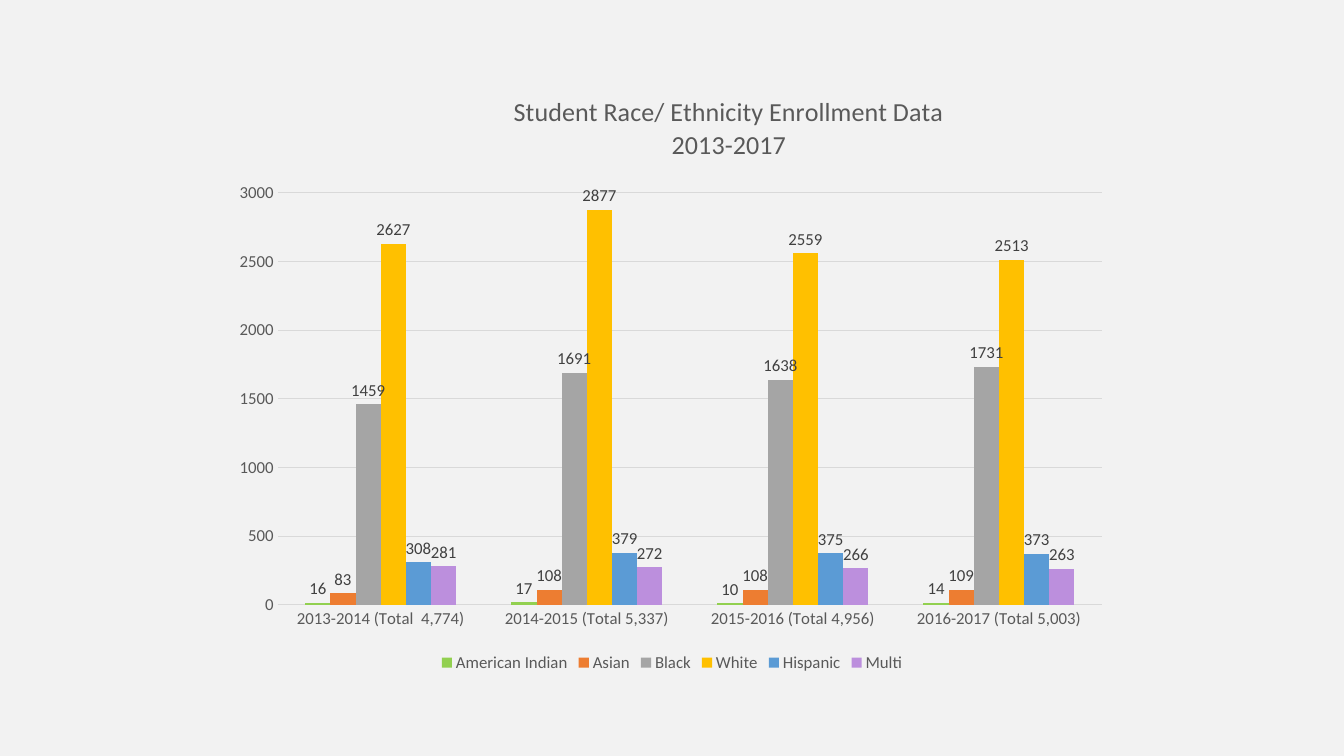
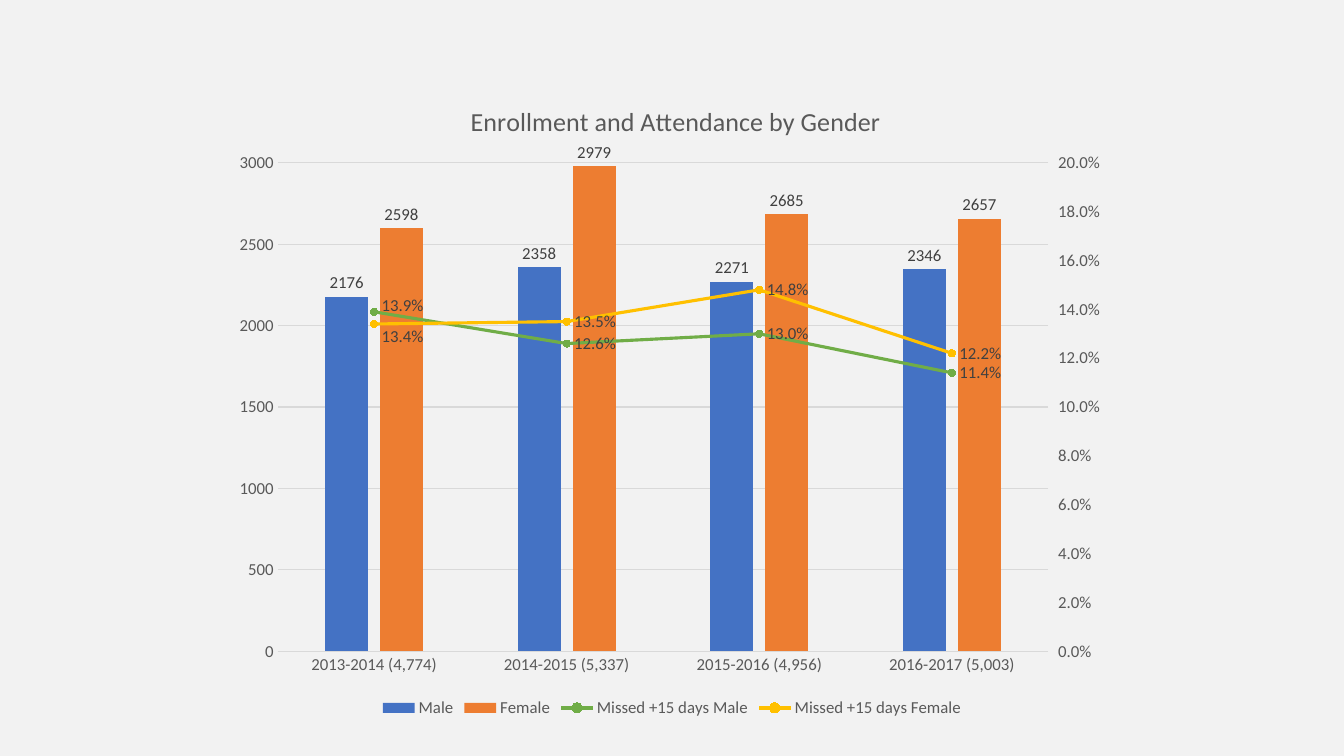
from copy import deepcopy

from pptx import Presentation
from pptx.chart.axis import ValueAxis
from pptx.chart.data import CategoryChartData
from pptx.dml.color import RGBColor
from pptx.enum.chart import (XL_CHART_TYPE, XL_LABEL_POSITION, XL_LEGEND_POSITION,
                             XL_MARKER_STYLE, XL_TICK_MARK)
from pptx.oxml import parse_xml
from pptx.oxml.ns import nsdecls, qn
from pptx.util import Inches, Pt


def color(hex_text):
    """Turn a hex string into a colour."""
    return RGBColor.from_string(hex_text)


def set_layout(parent, index, **settings):
    """Give a chart part a manual layout, creating it at index if missing."""
    layout = parent.find(qn("c:layout"))
    if layout is None:
        layout = parse_xml(f"<c:layout {nsdecls('c')}/>")
        parent.insert(index, layout)
    values = "".join(f'<c:{name} val="{value}"/>' for name, value in settings.items())
    layout.append(parse_xml(f"<c:manualLayout {nsdecls('c')}>{values}</c:manualLayout>"))


class Deck:
    """Holds the shared style, the presentation and the current slide."""

    font_name = "Calibri"
    text_size, title_size = 12, 18.6
    text_color, label_color, rule_color = "595959", "404040", "D9D9D9"
    left, top, width = 1 / 6, 0.105, 2 / 3

    def __init__(self):
        """Start a widescreen presentation with a light grey background."""
        self.presentation = Presentation()
        self.presentation.slide_width = Inches(13.33)
        self.presentation.slide_height = Inches(7.5)
        fill = self.presentation.slide_master.background.fill
        fill.solid()
        fill.fore_color.rgb = color("F2F2F2")
        self.slide = None

    def add_slide(self):
        """Add a blank slide and make it current."""
        self.slide = self.presentation.slides.add_slide(self.presentation.slide_layouts[6])

    def style_font(self, font, hex_text=text_color, size=text_size):
        """Apply the shared typeface with a size and a colour."""
        font.name = self.font_name
        font.size = Pt(size)
        font.bold = False
        font.color.rgb = color(hex_text)

    def add_column_chart(self, height, categories, series, overlap):
        """Add a clustered column chart from (name, values, number format) rows."""
        data = CategoryChartData()
        data.categories = categories
        for name, values, number_format in series:
            data.add_series(name, values, number_format)
        slide_width = self.presentation.slide_width
        slide_height = self.presentation.slide_height
        chart = self.slide.shapes.add_chart(
            XL_CHART_TYPE.COLUMN_CLUSTERED,
            int(slide_width * self.left), int(slide_height * self.top),
            int(slide_width * self.width), int(slide_height * height), data).chart
        self.style_font(chart.font)
        plot = chart.plots[0]
        plot.gap_width, plot.overlap = 219, overlap
        plot.vary_by_categories = False
        chart.has_legend = True
        chart.legend.position = XL_LEGEND_POSITION.BOTTOM
        chart.legend.include_in_layout = False
        self.style_font(chart.legend.font)
        self.style_axes(chart)
        return chart

    def style_axes(self, chart):
        """Style the category axis, the value axis and its gridlines."""
        for axis in (chart.category_axis, chart.value_axis):
            axis.major_tick_mark = axis.minor_tick_mark = XL_TICK_MARK.NONE
            self.style_font(axis.tick_labels.font)
        value_axis = chart.value_axis
        value_axis.minimum_scale, value_axis.maximum_scale = 0, 3000
        value_axis.major_unit = 500
        value_axis.format.line.fill.background()
        for part in (chart.category_axis, value_axis.major_gridlines):
            part.format.line.color.rgb = color(self.rule_color)
            part.format.line.width = Pt(0.75)

    def add_chart_title(self, chart, lines, left, top):
        """Write the chart title at a share of the chart's size."""
        chart.has_title = True
        frame = chart.chart_title.text_frame
        for index, line in enumerate(lines):
            paragraph = frame.add_paragraph() if index else frame.paragraphs[0]
            run = paragraph.add_run()
            run.text = line
            self.style_font(run.font, size=self.title_size)
        set_layout(chart.chart_title._element, 1, xMode="edge", yMode="edge", x=left, y=top)

    def place_plot(self, chart, left, top, width, height):
        """Set the inner plot area as shares of the chart's size."""
        set_layout(chart._chartSpace.chart.plotArea, 0, layoutTarget="inner",
                   xMode="edge", yMode="edge", x=left, y=top, w=width, h=height)

    def add_labels(self, series, position, number_format="General"):
        """Show the values of a series."""
        labels = series.data_labels
        labels.show_value = True
        labels.position = position
        labels.number_format = number_format
        labels.number_format_is_linked = False
        self.style_font(labels.font, self.label_color)

    def style_columns(self, chart, colors):
        """Colour and label each column series."""
        for series, hex_text in zip(chart.plots[0].series, colors):
            series.format.fill.solid()
            series.format.fill.fore_color.rgb = color(hex_text)
            series.invert_if_negative = False
            self.add_labels(series, XL_LABEL_POSITION.OUTSIDE_END)

    def move_to_lines(self, chart, first):
        """Turn the series from first onwards into lines on a right-hand axis."""
        columns = chart.plots[0]._element
        lines = parse_xml(
            f'<c:lineChart {nsdecls("c")}><c:grouping val="standard"/><c:varyColors val="0"/>'
            '<c:marker val="1"/><c:axId val="3001"/><c:axId val="3002"/></c:lineChart>')
        marker = lines.find(qn("c:marker"))
        for series in columns.findall(qn("c:ser"))[first:]:
            for flag in series.findall(qn("c:invertIfNegative")):
                series.remove(flag)
            marker.addprevious(series)
        columns.addnext(lines)

        category_axis = deepcopy(chart.category_axis._element)
        value_axis = deepcopy(chart.value_axis._element)
        chart.value_axis._element.addnext(value_axis)
        value_axis.addnext(category_axis)
        for axis, own, other in ((category_axis, "3001", "3002"), (value_axis, "3002", "3001")):
            axis.find(qn("c:axId")).set("val", own)
            axis.find(qn("c:crossAx")).set("val", other)
        value_axis.find(qn("c:axPos")).set("val", "r")
        value_axis.find(qn("c:crosses")).set("val", "max")
        ValueAxis(category_axis).visible = False
        right_axis = ValueAxis(value_axis)
        right_axis.has_major_gridlines = False
        right_axis.maximum_scale, right_axis.major_unit = 0.2, 0.02
        right_axis.major_tick_mark = XL_TICK_MARK.OUTSIDE
        right_axis.tick_labels.number_format = "0.0%"
        right_axis.tick_labels.number_format_is_linked = False

    def style_lines(self, chart, styles):
        """Colour and label each line, shifting its first label vertically."""
        for series, (hex_text, shift) in zip(chart.plots[1].series, styles):
            series.smooth = False
            series.format.line.color.rgb = color(hex_text)
            series.format.line.width = Pt(2.25)
            series.marker.style, series.marker.size = XL_MARKER_STYLE.CIRCLE, 5
            series.marker.format.fill.solid()
            series.marker.format.fill.fore_color.rgb = color(hex_text)
            series.marker.format.line.color.rgb = color(hex_text)
            self.add_labels(series, XL_LABEL_POSITION.RIGHT, "0.0%")
            first_label = series.points[0].data_label
            first_label.position = XL_LABEL_POSITION.RIGHT
            self.style_font(first_label.font, self.label_color)
            set_layout(series._element.find(".//" + qn("c:dLbl")), 1, x=0, y=shift)


def add_race_slide(deck):
    """Build the enrollment by race and ethnicity slide."""
    deck.add_slide()
    chart = deck.add_column_chart(
        0.79,
        ["2013-2014 (Total  4,774)", "2014-2015 (Total 5,337)",
         "2015-2016 (Total 4,956)", "2016-2017 (Total 5,003)"],
        [("American Indian", (16, 17, 10, 14), "General"),
         ("Asian", (83, 108, 108, 109), "General"),
         ("Black", (1459, 1691, 1638, 1731), "General"),
         ("White", (2627, 2877, 2559, 2513), "General"),
         ("Hispanic", (308, 379, 375, 373), "General"),
         ("Multi", (281, 272, 266, 263), "General")],
        overlap=0)
    deck.style_columns(chart, ["92D050", "ED7D31", "A5A5A5", "FFC000", "5B9BD5", "BC8FDD"])
    deck.add_chart_title(chart, ["Student Race/ Ethnicity Enrollment Data", "2013-2017"],
                         0.32, 0.02)
    deck.place_plot(chart, 0.06, 0.19, 0.92, 0.69)


def add_gender_slide(deck):
    """Build the enrollment and attendance by gender slide."""
    deck.add_slide()
    chart = deck.add_column_chart(
        0.85,
        ["2013-2014 (4,774)", "2014-2015 (5,337)", "2015-2016 (4,956)", "2016-2017 (5,003)"],
        [("Male", (2176, 2358, 2271, 2346), "General"),
         ("Female", (2598, 2979, 2685, 2657), "General"),
         ("Missed +15 days Male", (0.139, 0.126, 0.13, 0.114), "0.0%"),
         ("Missed +15 days Female", (0.134, 0.135, 0.148, 0.122), "0.0%")],
        overlap=-27)
    deck.move_to_lines(chart, first=2)
    deck.style_columns(chart, ["4472C4", "ED7D31"])
    deck.style_lines(chart, [("70AD47", -0.01), ("FFC000", 0.02)])
    deck.add_chart_title(chart, ["Enrollment and Attendance by Gender"], 0.27, 0.03)
    deck.place_plot(chart, 0.06, 0.13, 0.86, 0.76)


def main():
    """Build and save the presentation."""
    deck = Deck()
    add_race_slide(deck)
    add_gender_slide(deck)
    deck.presentation.save("out.pptx")


if __name__ == "__main__":
    main()
